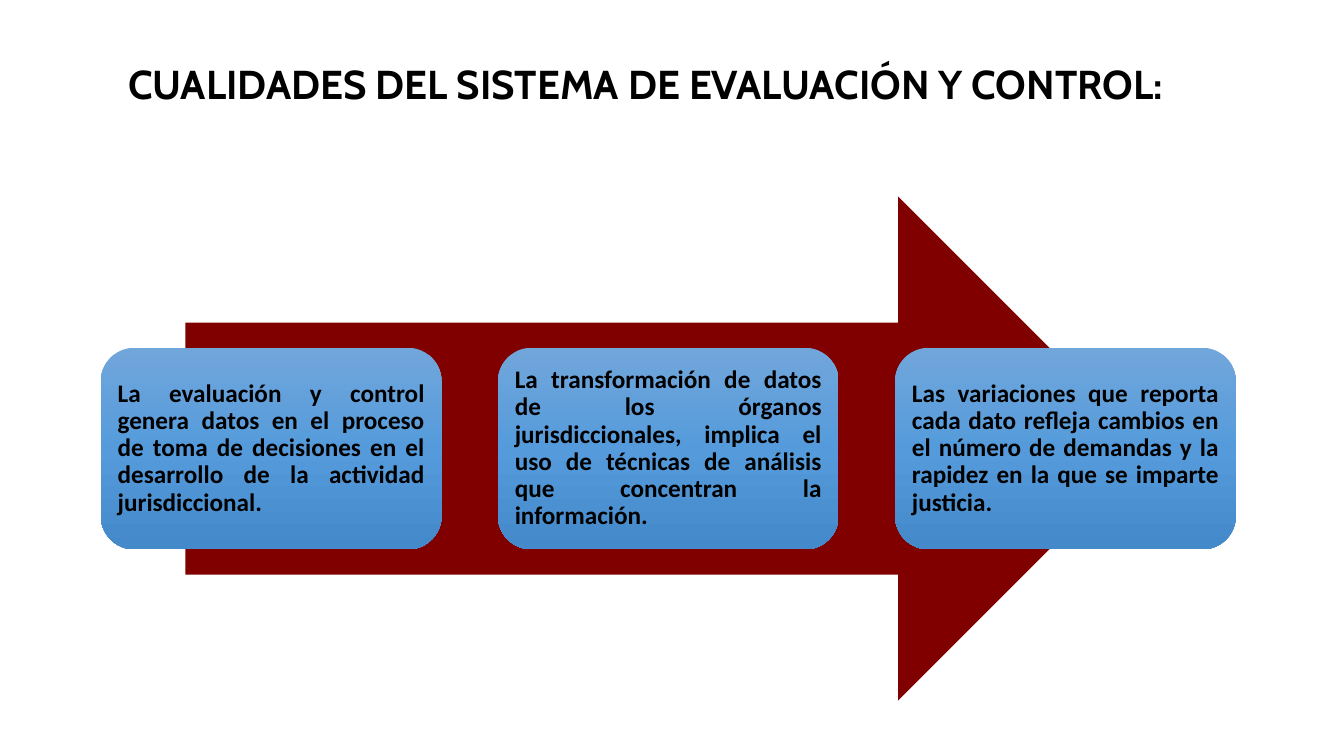
from copy import deepcopy
from dataclasses import dataclass

from pptx import Presentation
from pptx.dml.color import RGBColor
from pptx.enum.shapes import MSO_SHAPE as Kind
from pptx.enum.text import MSO_ANCHOR as Anchor, PP_ALIGN as Align
from pptx.oxml.ns import qn
from pptx.shapes.autoshape import Shape
from pptx.util import Inches, Pt

WIDE, HIGH = Inches(13.333), Inches(7.5)
BLACK, MAROON = "000000", "800000"
BLUES = ("71A6DB", "559BDB", "448ACA")
TITLE = "CUALIDADES DEL SISTEMA DE EVALUACIÓN Y CONTROL:"
CARDS = (
    "La evaluación y control genera datos en el proceso de toma de decisiones "
    "en el desarrollo de la actividad jurisdiccional.",
    "La transformación de datos de los órganos jurisdiccionales, implica el uso "
    "de técnicas de análisis que concentran la información.",
    "Las variaciones que reporta cada dato refleja cambios en el número de "
    "demandas y la rapidez en la que se imparte justicia.",
)


@dataclass(frozen=True)
class Box:
    left: float
    top: float
    wide: float
    high: float

    def area(self) -> tuple[int, int, int, int]:
        return (int(WIDE * self.left / 100), int(HIGH * self.top / 100),
                int(WIDE * self.wide / 100), int(HIGH * self.high / 100))


@dataclass(frozen=True)
class Style:
    face: str
    size: float
    align: Align
    anchor: Anchor
    inset: float


HEAD = Style("Cabin", 28.8, Align.CENTER, Anchor.TOP, 0.06)
BODY = Style("Calibri", 18, Align.JUSTIFY, Anchor.MIDDLE, 0.07)
FIRST, PITCH = Box(7.5, 46, 25.36, 26.67), 29.55


def paint(hue: str) -> RGBColor:
    return RGBColor.from_string(hue)


def write(shape: Shape, text: str, style: Style) -> None:
    frame = shape.text_frame
    frame.text = text
    frame.word_wrap = True
    frame.vertical_anchor = style.anchor
    frame.margin_left = frame.margin_right = Inches(style.inset)
    frame.margin_top = frame.margin_bottom = Inches(style.inset)
    line = frame.paragraphs[0]
    line.alignment, line.line_spacing = style.align, 0.9
    font = line.runs[0].font
    font.name, font.size, font.bold = style.face, Pt(style.size), True
    font.color.rgb = paint(BLACK)


def shade(shape: Shape, hues: tuple[str, ...]) -> None:
    fill = shape.fill
    fill.gradient()
    fill.gradient_angle = 270
    stops = next(shape._element.iter(qn("a:gsLst")))
    while len(stops) < len(hues):
        stops.append(deepcopy(stops[0]))
    for i, (stop, hue) in enumerate(zip(fill.gradient_stops, hues)):
        stop.position = i / (len(hues) - 1)
        stop.color.rgb = paint(hue)


def draw(slide, kind: Kind, box: Box) -> Shape:
    shape = slide.shapes.add_shape(kind, *box.area())
    shape.shadow.inherit = False
    shape.line.fill.background()
    return shape


def main() -> None:
    """Build the slide: a title and three cards over a broad arrow."""
    deck = Presentation()
    deck.slide_width, deck.slide_height = WIDE, HIGH
    slide = deck.slides.add_slide(deck.slide_layouts[6])

    title = slide.shapes.add_textbox(*Box(7.5, 7.73, 81.08, 13.33).area())
    write(title, TITLE, HEAD)

    arrow = draw(slide, Kind.RIGHT_ARROW, Box(13.8, 26, 71.78, 66.67))
    arrow.fill.solid()
    arrow.fill.fore_color.rgb = paint(MAROON)

    for i, text in enumerate(CARDS):
        place = Box(FIRST.left + i * PITCH, FIRST.top, FIRST.wide, FIRST.high)
        card = draw(slide, Kind.ROUNDED_RECTANGLE, place)
        shade(card, BLUES)
        write(card, text, BODY)

    deck.save("out.pptx")


if __name__ == "__main__":
    main()
